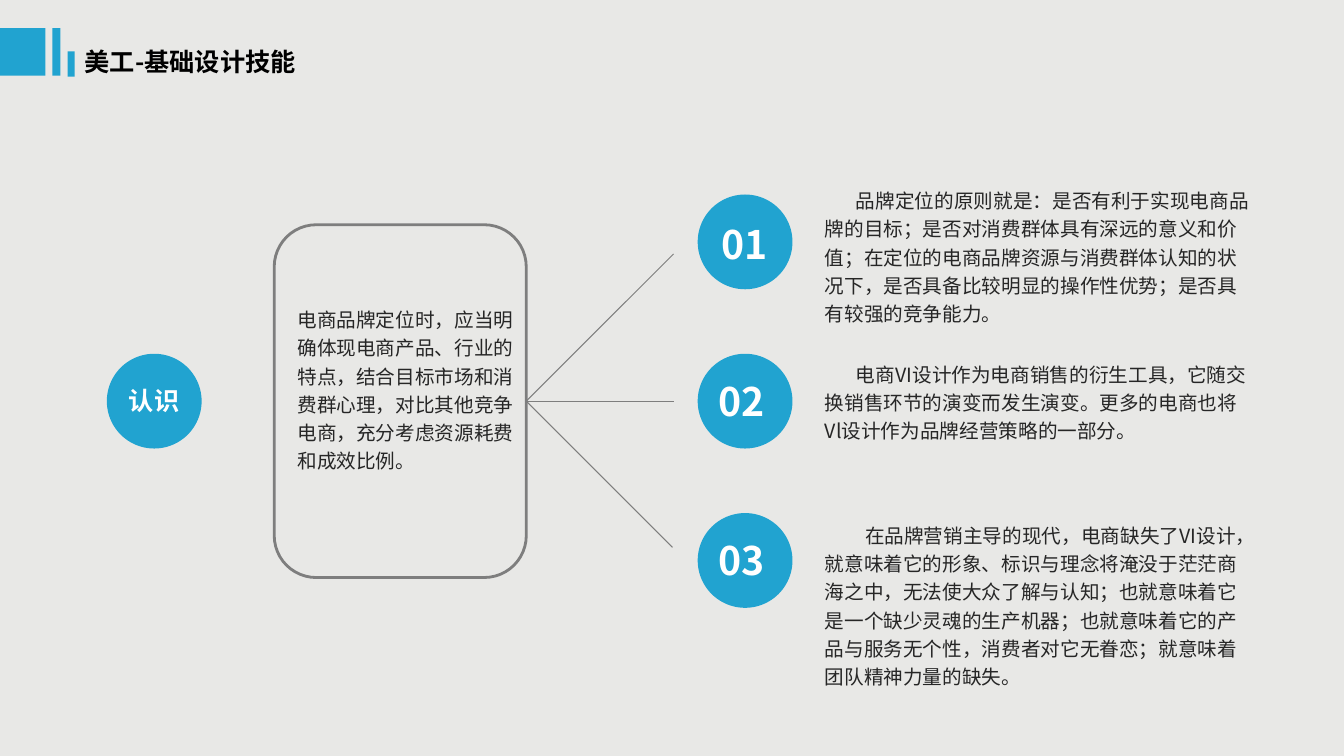
from dataclasses import dataclass

from lxml import etree
from pptx import Presentation
from pptx import util as u
from pptx.dml import color
from pptx.enum import shapes, text
from pptx.oxml import ns

FONT = "Noto Sans CJK SC"
BLUE, GRAY, INK, WHITE = "21A3D0", "7E7E7E", "262626", "FFFFFF"
DOT = 0.94
MID = text.MSO_ANCHOR.MIDDLE


@dataclass
class Box:
    x: float
    y: float
    w: float
    h: float

    def place(self) -> tuple:
        return tuple(u.Inches(v) for v in (self.x, self.y, self.w, self.h))


@dataclass
class Point:
    label: str
    label_box: Box
    body: str
    body_box: Box
    indent: float
    tip: tuple  # far end of the branch line


def rgb(code: str) -> color.RGBColor:
    return color.RGBColor.from_string(code)


def add_run(para, words: str, size: float, hue: str, bold: bool = False) -> None:
    run = para.add_run()
    run.text = words
    font = run.font
    font.name, font.size, font.bold = FONT, u.Pt(size), bold
    font.color.rgb = rgb(hue)
    east = etree.SubElement(run._r.get_or_add_rPr(), ns.qn("a:ea"))
    east.set("typeface", FONT)


def add_shape(slide, kind, box: Box, fill: str = "", line: str = ""):
    shape = slide.shapes.add_shape(kind, *box.place())
    shape.shadow.inherit = False
    if fill:
        shape.fill.solid()
        shape.fill.fore_color.rgb = rgb(fill)
    else:
        shape.fill.background()
    if line:
        shape.line.color.rgb = rgb(line)
        shape.line.width = u.Pt(2)
    else:
        shape.line.fill.background()
    return shape


def add_dot(slide, x: float, y: float) -> None:
    add_shape(slide, shapes.MSO_SHAPE.OVAL, Box(x, y, DOT, DOT), BLUE)


def fill_label(shape, words: str, size: float, hue: str) -> None:
    frame = shape.text_frame
    frame.word_wrap = True
    frame.auto_size = text.MSO_AUTO_SIZE.NONE
    frame.vertical_anchor = MID
    para = frame.paragraphs[0]
    para.alignment = text.PP_ALIGN.LEFT
    add_run(para, words, size, hue, True)


def add_label(slide, box: Box, words: str, size: float) -> None:
    fill_label(slide.shapes.add_textbox(*box.place()), words, size, WHITE)


def add_body(slide, box: Box, words: str, indent: float = 0) -> None:
    frame = slide.shapes.add_textbox(*box.place()).text_frame
    frame.word_wrap = True
    frame.margin_left = frame.margin_right = 0
    frame.margin_top = frame.margin_bottom = 0
    para = frame.paragraphs[0]
    para.line_spacing = u.Pt(20.16)
    if indent:
        para._p.get_or_add_pPr().set("indent", str(u.Inches(indent)))
    add_run(para, words, 14, INK)


def add_branch(slide, card, tip: tuple) -> None:
    x, y = (u.Inches(v) for v in tip)
    line = slide.shapes.add_connector(
        shapes.MSO_CONNECTOR.STRAIGHT, card.left + card.width,
        card.top + card.height // 2, x, y)
    line.begin_connect(card, 3)
    line.line.color.rgb = rgb(GRAY)
    line.line.width = u.Pt(0.75)
    etree.SubElement(line._element.spPr, ns.qn("a:effectLst"))


BARS = [Box(0, 0.28, 0.45, 0.47), Box(0.52, 0.28, 0.08, 0.47),
        Box(0.67, 0.51, 0.07, 0.25)]

POINTS = [
    Point("01", Box(7.06, 2.13, 0.83, 0.57),
          "品牌定位的原则就是：是否有利于实现电商品牌的目标；是否对消费群体具有深远的意义和价值；"
          "在定位的电商品牌资源与消费群体认知的状况下，是否具备比较明显的操作性优势；"
          "是否具有较强的竞争能力。",
          Box(8.18, 1.83, 4.25, 1.41), 0.31, (6.68, 2.52)),
    Point("02", Box(7.03, 3.69, 0.83, 0.57),
          "电商VI设计作为电商销售的衍生工具，它随交换销售环节的演变而发生演变。"
          "更多的电商也将Vl设计作为品牌经营策略的一部分。",
          Box(8.18, 3.55, 4.25, 0.85), 0.31, (6.68, 3.98)),
    Point("03", Box(7.03, 5.27, 0.83, 0.57),
          "在品牌营销主导的现代，电商缺失了VI设计，就意味着它的形象、标识与理念将淹没于茫茫商海之中，"
          "无法使大众了解与认知；也就意味着它是一个缺少灵魂的生产机器；"
          "也就意味着它的产品与服务无个性，消费者对它无眷恋；就意味着团队精神力量的缺失。",
          Box(8.18, 5.15, 4.25, 1.7), 0.4, (6.67, 5.43)),
]


def main() -> None:
    deck = Presentation()
    deck.slide_width, deck.slide_height = u.Inches(13.33), u.Inches(7.5)
    slide = deck.slides.add_slide(deck.slide_layouts[5])
    slide.background.fill.solid()
    slide.background.fill.fore_color.rgb = rgb("E8E8E6")

    # Heading with its bars
    title = slide.shapes.title
    title.left, title.top, title.width, title.height = Box(
        0.74, 0.41, 2.71, 0.4).place()
    fill_label(title, "美工-基础设计技能", 18, "000000")
    for bar in BARS:
        add_shape(slide, shapes.MSO_SHAPE.RECTANGLE, bar, BLUE)

    # Topic and its summary card
    add_dot(slide, 1.06, 3.51)
    add_label(slide, Box(1.18, 3.77, 0.9, 0.4), "认识", 18)
    card = add_shape(slide, shapes.MSO_SHAPE.ROUNDED_RECTANGLE,
                     Box(2.72, 2.23, 2.5, 3.5), line=GRAY)
    add_body(slide, Box(2.95, 3.01, 2.25, 1.7),
             "电商品牌定位时，应当明确体现电商产品、行业的特点，结合目标市场和消费群心理，"
             "对比其他竞争电商，充分考虑资源耗费和成效比例。")

    # Numbered points
    for row, point in enumerate(POINTS):
        add_branch(slide, card, point.tip)
        add_dot(slide, 6.92, 1.93 + 1.58 * row)
        add_label(slide, point.label_box, point.label, 28)
        add_body(slide, point.body_box, point.body, point.indent)

    deck.save("out.pptx")


if __name__ == "__main__":
    main()
